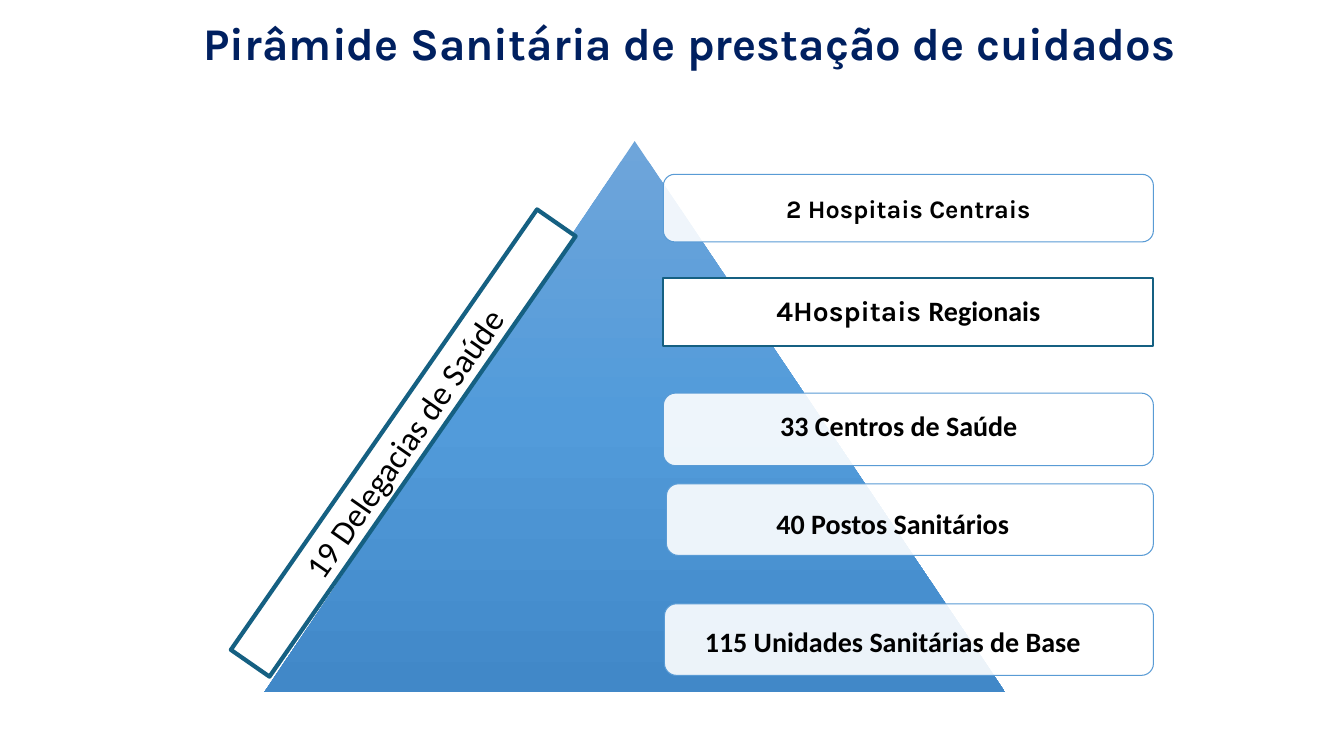
from copy import deepcopy

from lxml.etree import SubElement
from pptx import Presentation
from pptx.dml.color import RGBColor
from pptx.enum.shapes import MSO_SHAPE
from pptx.enum.text import MSO_ANCHOR, MSO_AUTO_SIZE, PP_ALIGN
from pptx.oxml.ns import qn
from pptx.util import Inches, Pt

NAVY = RGBColor(0x00, 0x20, 0x60)
BLACK = RGBColor(0x00, 0x00, 0x00)
WHITE = RGBColor(0xFF, 0xFF, 0xFF)
TEAL = RGBColor(0x15, 0x60, 0x82)
SKY = RGBColor(0x59, 0x9B, 0xD5)
SHADES = [RGBColor(0x6E, 0xA5, 0xDA), RGBColor(0x52, 0x9B, 0xDA),
          RGBColor(0x41, 0x88, 0xC8)]

# Card place, label place, label
LEVELS = [
    ((6.58, 3.9, 4.86, 0.72), (6.59, 3.94, 4.65, 0.6), "33 Centros de Saúde"),
    ((6.61, 4.8, 4.83, 0.71), (6.53, 4.93, 4.65, 0.56), "40 Postos Sanitários"),
    ((6.59, 5.99, 4.85, 0.71), (6.53, 6.06, 4.65, 0.65),
     "115 Unidades Sanitárias de Base"),
]


def add_box(slide, kind, place, line, width):
    """Add a white preset shape with a coloured outline."""
    box = slide.shapes.add_shape(kind, *map(Inches, place))
    box.shadow.inherit = False
    box.fill.solid()
    box.fill.fore_color.rgb = WHITE
    box.line.color.rgb = line
    box.line.width = Pt(width)
    return box


def add_card(slide, place):
    """Add a rounded card that lets a tenth of the pyramid through."""
    card = add_box(slide, MSO_SHAPE.ROUNDED_RECTANGLE, place, SKY, 0.75)
    fill = card._element.spPr.find(qn("a:solidFill"))
    SubElement(fill[0], qn("a:alpha")).set("val", "90000")
    return card


def set_text(shape, text, size, font="Calibri", bold=True, color=BLACK, inset=0.1):
    """Write one centred paragraph and return it."""
    frame = shape.text_frame
    frame.word_wrap = True
    frame.vertical_anchor = MSO_ANCHOR.MIDDLE
    frame.margin_left = frame.margin_right = Inches(0.1)
    frame.margin_top = frame.margin_bottom = Inches(inset)
    para = frame.paragraphs[0]
    para.text = text
    para.alignment = PP_ALIGN.CENTER
    para.font.size = Pt(size)
    para.font.name = font
    para.font.bold = bold
    para.font.color.rgb = color
    return para


def add_label(slide, place, text):
    label = slide.shapes.add_textbox(*map(Inches, place))
    set_text(label, text, 20).line_spacing = 0.9


def add_title(slide, text):
    title = slide.shapes.title
    title.left, title.top = Inches(1.72), Inches(0.1)
    title.width, title.height = Inches(10.24), Inches(1.19)
    para = set_text(title, text, 32.4, "Karla", color=NAVY, inset=0.15)
    para.line_spacing = Pt(32)
    title.text_frame.vertical_anchor = MSO_ANCHOR.TOP
    title.text_frame.auto_size = MSO_AUTO_SIZE.NONE


def add_pyramid(slide):
    shape = slide.shapes.add_shape(
        MSO_SHAPE.ISOSCELES_TRIANGLE,
        Inches(2.62), Inches(1.4), Inches(7.35), Inches(5.47))
    shape.shadow.inherit = False
    shape.line.fill.background()
    shape.fill.gradient()
    shape.fill.gradient_angle = 270
    stops = shape._element.spPr.find(".//" + qn("a:gsLst"))
    stops.insert(1, deepcopy(stops[0]))
    for i, (stop, shade) in enumerate(zip(shape.fill.gradient_stops, SHADES)):
        stop.position = i / 2
        stop.color.rgb = shade


def add_band(slide, text):
    """Add the slanted bar along the pyramid's left side."""
    band = add_box(slide, MSO_SHAPE.MATH_MINUS, (0.38, 3.44, 7.24, 1.91), TEAL, 3)
    band.adjustments[0] = 0.244
    band.rotation = 304.8
    set_text(band, text, 24, bold=False, inset=0.05)


def add_region(slide):
    box = add_box(slide, MSO_SHAPE.RECTANGLE, (6.58, 2.76, 4.86, 0.67), TEAL, 1.5)
    para = set_text(box, "4Hospitais ", 20, "Karla")
    para.line_spacing = 0.9
    run = para.add_run()
    run.text = "Regionais"
    run.font.name = "Calibri"


def main():
    deck = Presentation()
    deck.slide_width, deck.slide_height = Inches(13.33), Inches(7.5)
    slide = deck.slides.add_slide(deck.slide_layouts[5])
    add_title(slide, "Pirâmide Sanitária de prestação de cuidados")
    add_pyramid(slide)
    top = add_card(slide, (6.58, 1.73, 4.86, 0.67))
    set_text(top, "2 Hospitais Centrais", 18, "Karla")
    for card, place, text in LEVELS:
        add_card(slide, card)
        add_label(slide, place, text)
    add_band(slide, "19 Delegacias de Saúde")
    add_region(slide)
    deck.save("out.pptx")


if __name__ == "__main__":
    main()
